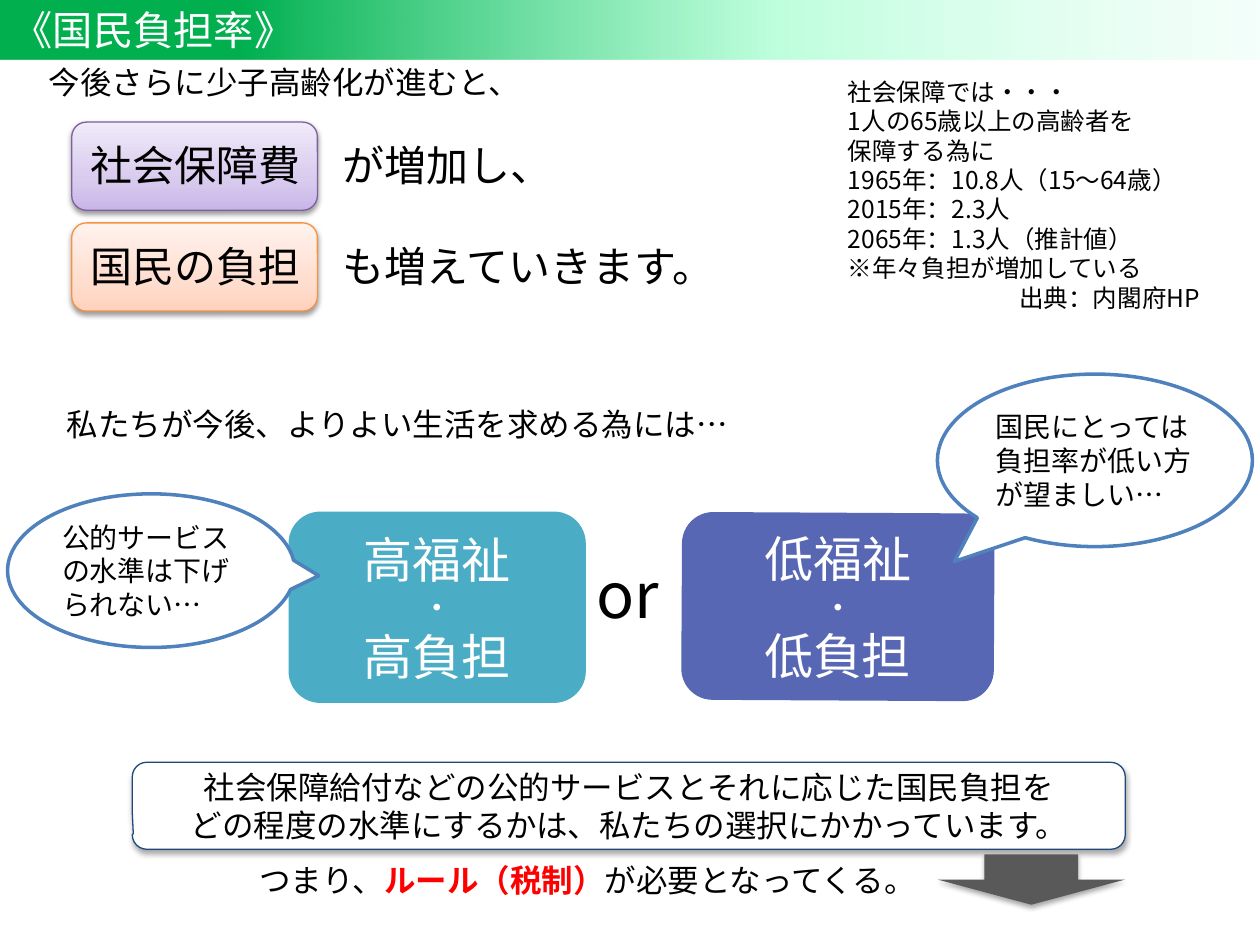
"""Build the slide on the national burden ratio."""
import lxml.etree
import pptx
import pptx.dml.color
import pptx.enum.shapes
import pptx.enum.text
import pptx.oxml
import pptx.oxml.ns
import pptx.util

Pt = pptx.util.Pt
rgb = pptx.dml.color.RGBColor.from_string
qn = pptx.oxml.ns.qn
MSO = pptx.enum.shapes.MSO_SHAPE
LEFT = pptx.enum.text.PP_ALIGN.LEFT
CENTER = pptx.enum.text.PP_ALIGN.CENTER
TOP = pptx.enum.text.MSO_ANCHOR.TOP
MIDDLE = pptx.enum.text.MSO_ANCHOR.MIDDLE
FONT = "Noto Sans CJK JP"
BLACK, WHITE = "000000", "FFFFFF"

prs = pptx.Presentation()
prs.slide_width, prs.slide_height = Pt(720), Pt(540)
s = prs.slides.add_slide(prs.slide_layouts[5])


def add_shape(kind, box, fill, line=None, width=0.75, adj=(), shadow=0):
    sp = s.shapes.add_shape(kind, *map(Pt, box))
    for i, value in enumerate(adj):
        sp.adjustments[i] = value
    sp.fill.solid()
    sp.fill.fore_color.rgb = rgb(fill)
    if line:
        sp.line.color.rgb = rgb(line)
        sp.line.width = Pt(width)
    else:
        sp.line.fill.background()
    sp.shadow.inherit = False
    if shadow:
        sp._element.spPr.find(qn("a:effectLst")).append(pptx.oxml.parse_xml(
            f'<a:outerShdw {pptx.oxml.ns.nsdecls("a")} blurRad="{Pt(3.1)}" dist="{Pt(1.7)}" '
            f'dir="5400000" rotWithShape="0"><a:srgbClr val="{BLACK}">'
            f'<a:alpha val="{shadow * 1000}"/></a:srgbClr></a:outerShdw>'))
    return sp


def write(sp, lines, color=BLACK, align=LEFT, anchor=TOP, wrap=True):
    tf = sp.text_frame
    tf.word_wrap = wrap
    tf.auto_size = pptx.enum.text.MSO_AUTO_SIZE.NONE
    tf.vertical_anchor = anchor
    for i, (text, size, before, indent) in enumerate(lines):
        p = tf.add_paragraph() if i else tf.paragraphs[0]
        p.text = text
        p.alignment = align
        p.line_spacing = Pt(1.2 * size)
        p.space_before = Pt(before)
        p.font.size = Pt(size)
        p.font.name = FONT
        p.font.color.rgb = rgb(color)
        pPr = p._p.get_or_add_pPr()
        if indent:
            pPr.set("marL", str(Pt(indent)))
        lxml.etree.SubElement(pPr.find(qn("a:defRPr")), qn("a:ea"), typeface=FONT)
    return tf


title = s.shapes.title
title.left, title.top, title.width, title.height = map(Pt, (0, 0, 720, 34))
write(title, [("《国民負担率》", 23, 0, 0)], WHITE, anchor=MIDDLE)

cost = add_shape(MSO.ROUNDED_RECTANGLE, (41, 69.8, 140.4, 50.4), WHITE, "7D60A0", shadow=38)
burden = add_shape(MSO.ROUNDED_RECTANGLE, (41, 127.4, 140.4, 50.4), WHITE, "F69240", shadow=38)

gradients = [
    (title, 0, [(19, "00B050", 100), (61, "ABFFD3", 78), (100, "DBFFF0", 28)]),
    (cost, 270, [(0, "C9B5E8", 100), (35, "D8CBEE", 100), (100, "F0EAF9", 100)]),
    (burden, 270, [(0, "FFD2BD", 100), (35, "FFDED0", 100), (100, "FFF2ED", 100)]),
]
for sp, angle, stops in gradients:
    sp.fill.gradient()
    grad = sp._element.spPr.find(qn("a:gradFill"))
    gs_list = grad.find(qn("a:gsLst"))
    for gs in list(gs_list):
        gs_list.remove(gs)
    for pos, color, alpha in stops:
        gs = lxml.etree.SubElement(gs_list, qn("a:gs"), pos=str(pos * 1000))
        clr = lxml.etree.SubElement(gs, qn("a:srgbClr"), val=color)
        if alpha < 100:
            lxml.etree.SubElement(clr, qn("a:alpha"), val=str(alpha * 1000))
    grad.find(qn("a:lin")).set("ang", str(angle * 60000))

options = [
    ("高", (164.9, 292.3, 169.9, 109.4), "4BACC6", 0),
    ("低", (389.5, 293, 178.6, 107.3), "5767B4", 0.3),
]
for level, box, fill, angle in options:
    sp = add_shape(MSO.ROUNDED_RECTANGLE, box, fill)
    sp.rotation = angle
    lines = [(level + "福祉", 28, 0, 0), ("・", 18, 0, 0), (level + "負担", 28, 0, 0)]
    write(sp, lines, WHITE, CENTER, MIDDLE)

callouts = [
    ("国民にとっては負担率が低い方が望ましい…", (535.7, 213.8, 180, 98.6), (-0.446, 0.586)),
    ("公的サービスの水準は下げられない…", (4.3, 282.2, 164.2, 87.8), (0.583, 0.033)),
]
for text, box, adj in callouts:
    sp = add_shape(MSO.OVAL_CALLOUT, box, WHITE, "4F81BD", 2, adj)
    write(sp, [(text, 16, 0, 0)], anchor=MIDDLE)

choice = add_shape(MSO.ROUNDED_RECTANGULAR_CALLOUT, (75.6, 435.6, 567.4, 49.7), WHITE,
                   "1F497D", adj=(-0.499, 0.319, 0.167), shadow=35)
write(choice, [("社会保障給付などの公的サービスとそれに応じた国民負担を", 18, 0, 0),
               ("どの程度の水準にするかは、私たちの選択にかかっています。", 18, 0, 0)],
      align=CENTER, anchor=MIDDLE, wrap=False)
add_shape(MSO.DOWN_ARROW, (535.7, 488.2, 107.3, 28.8), "595959", shadow=35)

facts = ["社会保障では・・・", "1人の65歳以上の高齢者を", "保障する為に",
         "1965年：10.8人（15～64歳）", "2015年：2.3人", "2065年：1.3人（推計値）",
         "※年々負担が増加している"]
texts = [
    ((318.2, 313.9, 80.6, 51.1), CENTER, [("or", 36, 0, 0)]),
    ((31, 228.2, 464.4, 28.8), LEFT, [("私たちが今後、よりよい生活を求める為には…", 18, 0, 0)]),
    ((477.4, 40.3, 239, 143.3), LEFT,
     [(fact, 14, 0, 0) for fact in facts] + [("出典：内閣府HP", 14, 0, 98)]),
    ((20.9, 32.4, 429.8, 138.2), LEFT,
     [("今後さらに少子高齢化が進むと、", 18, 0, 0),
      ("社会保障費　が増加し、", 24, 22, 24),
      ("国民の負担　も増えていきます。", 24, 29, 24)]),
]
for box, align, lines in texts:
    write(s.shapes.add_textbox(*map(Pt, box)), lines, align=align)

rule = s.shapes.add_textbox(*map(Pt, (141.1, 488.2, 517, 28.8)))
p = write(rule, [("つまり、", 18, 0, 0)]).paragraphs[0]
r = p.add_run()
r.text = "ルール（税制）"
r.font.bold = True
r.font.color.rgb = rgb("FF0000")
p.add_run().text = "が必要となってくる。"

prs.save("out.pptx")
